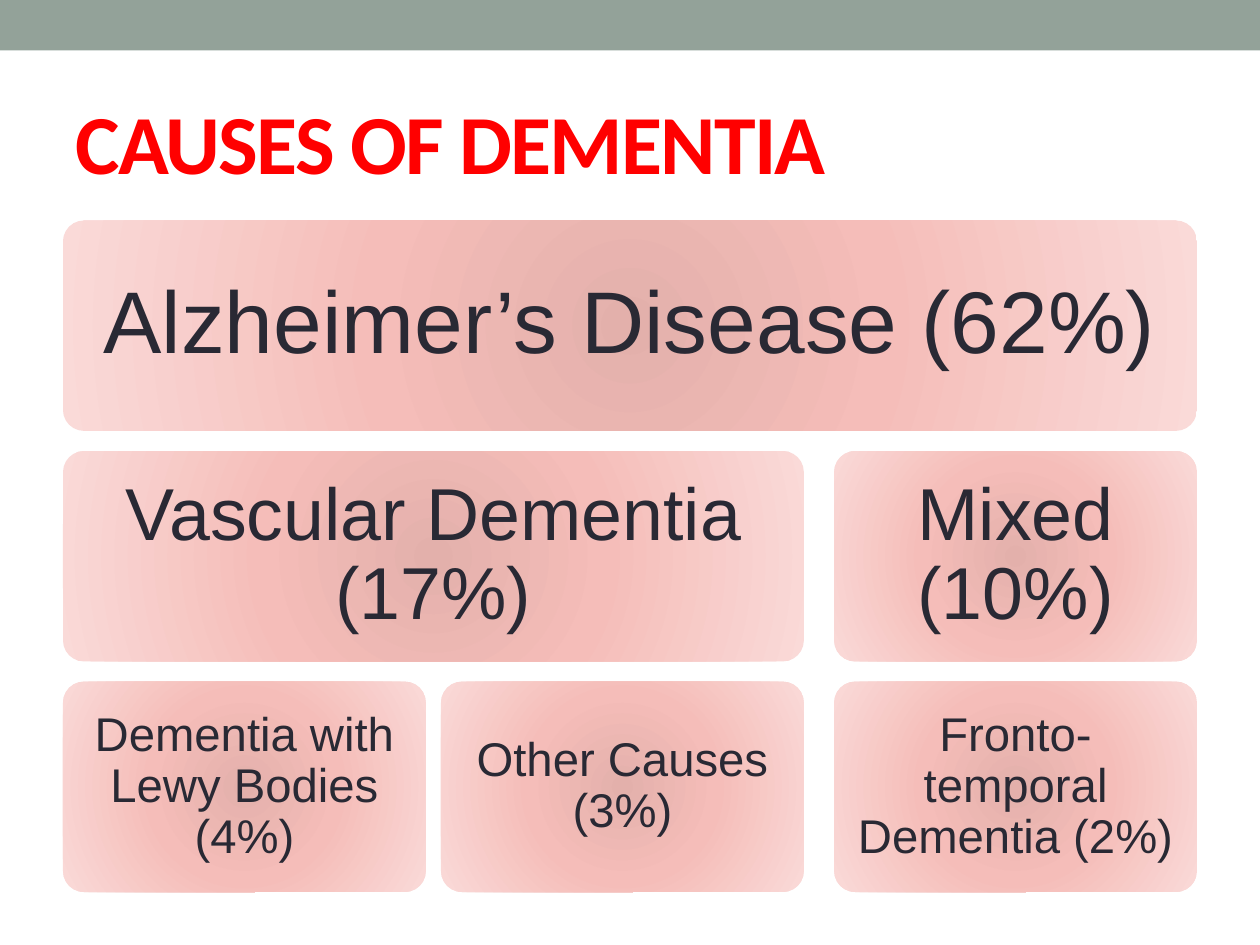
from pptx import Presentation
from pptx import util as u
from pptx.dml.color import RGBColor
from pptx.enum import shapes, text
from pptx.oxml import parse_xml
from pptx.oxml.ns import nsdecls, qn

CARD_STOPS = [(0, "E3B0AB"), (45, "F5BDB9"), (100, "FADAD8")]
CARD_HEIGHT = 1.67
ROW_STEP = 1.83


def color(value):
    return RGBColor.from_string(value)


def write_text(shape, content, *, font, size, fill, bold=False, spacing=None,
               align=text.PP_ALIGN.LEFT, line_spacing=None, inset=None):
    frame = shape.text_frame
    frame.word_wrap = True
    frame.vertical_anchor = text.MSO_ANCHOR.MIDDLE
    if inset is not None:
        frame.margin_left = frame.margin_right = u.Inches(inset)
        frame.margin_top = frame.margin_bottom = u.Inches(inset)
    paragraph = frame.paragraphs[0]
    paragraph.alignment = align
    paragraph.line_spacing = line_spacing
    run = paragraph.add_run()
    run.text = content
    run.font.name = font
    run.font.size = u.Pt(size)
    run.font.bold = bold
    run.font.color.rgb = color(fill)
    if spacing is not None:
        run.font._element.set("spc", str(spacing * 100))


def add_box(slide, kind, box):
    shape = slide.shapes.add_shape(kind, *map(u.Inches, box))
    shape.shadow.inherit = False
    shape.line.fill.background()
    return shape


def fill_radial(shape, stops):
    stop_xml = "".join(
        f'<a:gs pos="{position * 1000}"><a:srgbClr val="{value}"/></a:gs>'
        for position, value in stops)
    gradient = parse_xml(
        f'<a:gradFill {nsdecls("a")} rotWithShape="1"><a:gsLst>{stop_xml}</a:gsLst>'
        '<a:path path="circle"><a:fillToRect l="100000" t="100000" '
        'r="100000" b="100000"/></a:path></a:gradFill>')
    shape.element.spPr.find(qn("a:prstGeom")).addnext(gradient)


def add_header(slide, band_box, title_box):
    # Coloured band along the top edge
    band = add_box(slide, shapes.MSO_SHAPE.RECTANGLE, band_box)
    band.fill.solid()
    band.fill.fore_color.rgb = color("93A299")
    # Title
    title = slide.shapes.add_textbox(*map(u.Inches, title_box))
    write_text(title, "CAUSES OF DEMENTIA", font="Calibri", size=48,
               fill="FF0000", bold=True, spacing=-1)


def add_card(slide, box, content, size, inset):
    card = add_box(slide, shapes.MSO_SHAPE.ROUNDED_RECTANGLE, box)
    card.adjustments[0] = 0.1
    fill_radial(card, CARD_STOPS)
    write_text(card, content, font="Arial", size=size, fill="292934",
               align=text.PP_ALIGN.CENTER, line_spacing=0.9, inset=inset)


def add_cause_hierarchy(slide, left, top):
    # Each row: text size, inset, and cards as (offset, width, wording)
    rows = [
        (50, 0.21, [(0, 9, "Alzheimer’s Disease (62%)")]),
        (42, 0.17, [(0, 5.88, "Vascular Dementia (17%)"),
                    (6.12, 2.88, "Mixed (10%)")]),
        (27, 0.11, [(0, 2.88, "Dementia with Lewy Bodies (4%)"),
                    (3, 2.88, "Other Causes (3%)"),
                    (6.12, 2.88, "Fronto-temporal Dementia (2%)")]),
    ]
    for index, (size, inset, cards) in enumerate(rows):
        for offset, width, content in cards:
            box = (left + offset, top + index * ROW_STEP, width, CARD_HEIGHT)
            add_card(slide, box, content, size, inset)


def main():
    presentation = Presentation()
    presentation.slide_width = u.Inches(10)
    presentation.slide_height = u.Inches(7.5)
    slide = presentation.slides.add_slide(presentation.slide_layouts[6])
    add_header(slide, (0, 0, 10, 0.4), (0.5, 0.58, 9, 1.08))
    add_cause_hierarchy(slide, 0.5, 1.75)
    presentation.save("out.pptx")


if __name__ == "__main__":
    main()
